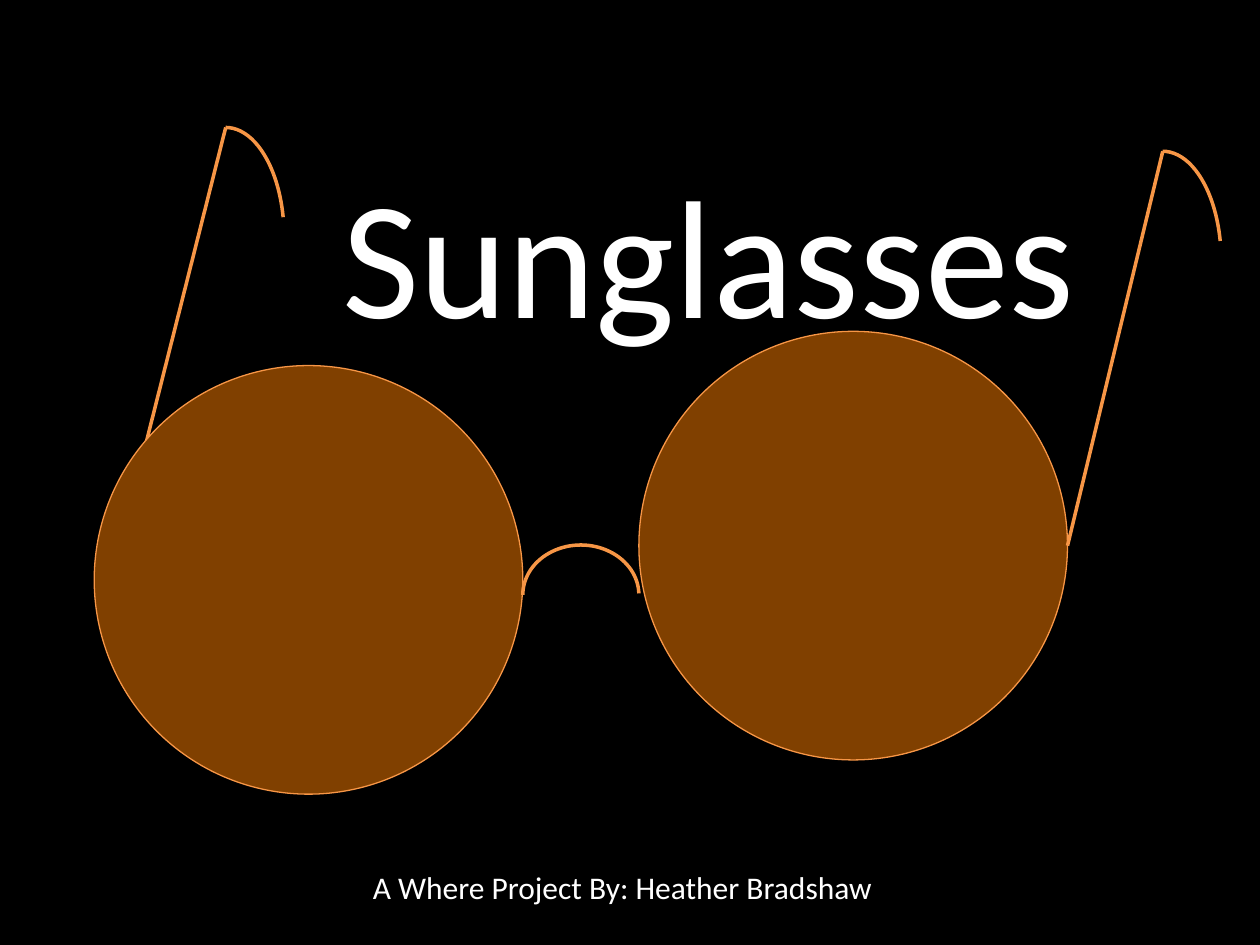
import pptx
import pptx.dml.color
import pptx.enum.shapes
import pptx.enum.text
import pptx.oxml.ns
import pptx.util
from lxml import etree
from pptx.util import Cm

RGB = pptx.dml.color.RGBColor.from_string
SHAPE = pptx.enum.shapes.MSO_SHAPE
ALIGN = pptx.enum.text.PP_ALIGN

THEME = {
    "font": "Calibri", "background": "000000", "text": "FFFFFF",
    "lens": "804000", "frame": "F79646",
    "title_size": 96, "credit_size": 18, "rim": 0.75, "wire": 2,
}

# Lengths in centimetres.
TEXTS = [
    ("Sunglasses", (6.65, 2.9, 16.05, 4.37), "title_size", ALIGN.LEFT),
    ("A Where Project By: Heather Bradshaw", (6.96, 17.37, 11.18, 1.02),
     "credit_size", ALIGN.CENTER),
]
LENS_DIAMETER = 8.64
LEFT_LENS, RIGHT_LENS = (1.9, 7.37), (12.88, 6.68)
LEFT_ARM = ((2.21, 11.84), (4.55, 2.57))
RIGHT_ARM = ((RIGHT_LENS[0] + LENS_DIAMETER, RIGHT_LENS[1] + LENS_DIAMETER / 2),
             (23.44, 3.05))
EAR_HOOK = (2.36, 4.42)
BRIDGE_CENTER_Y, BRIDGE_DEPTH = 11.99, 2.01
# Arc angles in units of 100000/60000 degrees.
ARC_START, HOOK_END, BRIDGE_END = 162, 204.56, 53.16


def style_line(shape, width):
    shape.line.color.rgb = RGB(THEME["frame"])
    shape.line.width = pptx.util.Pt(width)


def add_lens(slide, corner):
    lens = slide.shapes.add_shape(
        SHAPE.OVAL, *map(Cm, (*corner, LENS_DIAMETER, LENS_DIAMETER)))
    lens.shadow.inherit = False
    lens.fill.solid()
    lens.fill.fore_color.rgb = RGB(THEME["lens"])
    style_line(lens, THEME["rim"])


def add_arm(slide, hinge, tip):
    arm = slide.shapes.add_connector(
        pptx.enum.shapes.MSO_CONNECTOR.STRAIGHT, *map(Cm, (*tip, *hinge)))
    style_line(arm, THEME["wire"])
    etree.SubElement(arm._element.spPr, pptx.oxml.ns.qn("a:effectLst"))


def add_arc(slide, box, end, rotation=0):
    arc = slide.shapes.add_shape(SHAPE.ARC, *map(Cm, box))
    arc.shadow.inherit = False
    arc.fill.background()
    arc.adjustments[0], arc.adjustments[1] = ARC_START, end
    arc.rotation = rotation
    style_line(arc, THEME["wire"])


def add_ear_hook(slide, tip):
    width, height = EAR_HOOK
    add_arc(slide, (tip[0] - width / 2, tip[1], width, height), HOOK_END)


def add_bridge(slide):
    """Span the gap between the lenses with a quarter-turned half arc."""
    inner_edge = LEFT_LENS[0] + LENS_DIAMETER
    span = RIGHT_LENS[0] - inner_edge
    center_x = inner_edge + span / 2
    add_arc(slide, (center_x - BRIDGE_DEPTH / 2, BRIDGE_CENTER_Y - span / 2,
                    BRIDGE_DEPTH, span), BRIDGE_END, 270)


def add_text(slide, wording, box, size, align):
    frame = slide.shapes.add_textbox(*map(Cm, box)).text_frame
    frame.word_wrap = True
    frame.auto_size = pptx.enum.text.MSO_AUTO_SIZE.SHAPE_TO_FIT_TEXT
    paragraph = frame.paragraphs[0]
    paragraph.alignment = align
    run = paragraph.add_run()
    run.text = wording
    run.font.name = THEME["font"]
    run.font.size = pptx.util.Pt(THEME[size])
    run.font.color.rgb = RGB(THEME["text"])


def main():
    deck = pptx.Presentation()
    deck.slide_width, deck.slide_height = Cm(25.4), Cm(19.05)
    slide = deck.slides.add_slide(deck.slide_layouts[6])
    slide.background.fill.solid()
    slide.background.fill.fore_color.rgb = RGB(THEME["background"])

    add_arm(slide, *LEFT_ARM)
    for corner in (RIGHT_LENS, LEFT_LENS):
        add_lens(slide, corner)
    add_arm(slide, *RIGHT_ARM)
    add_ear_hook(slide, LEFT_ARM[1])
    add_bridge(slide)
    add_ear_hook(slide, RIGHT_ARM[1])
    for text in TEXTS:
        add_text(slide, *text)
    deck.save("out.pptx")


if __name__ == "__main__":
    main()
